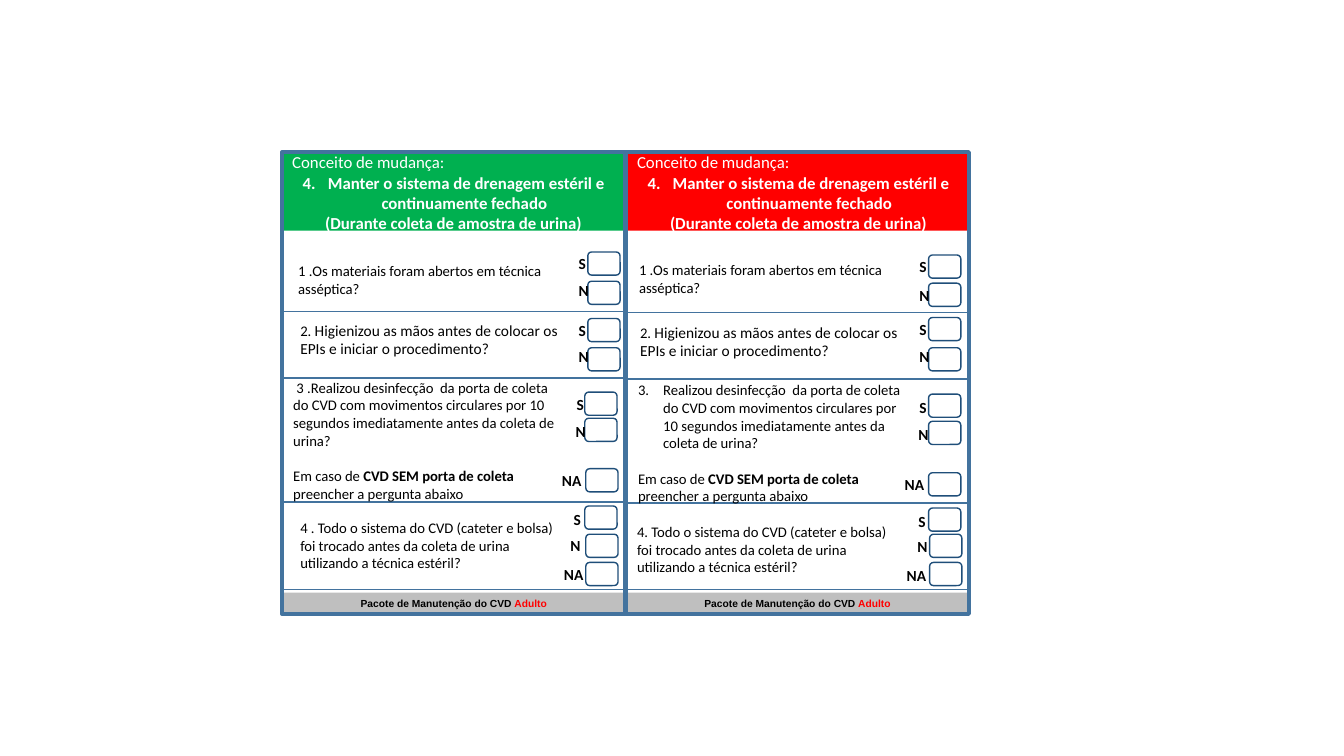
from dataclasses import dataclass

from lxml import etree
from pptx import Presentation
from pptx.dml.color import RGBColor
from pptx.enum.shapes import MSO_CONNECTOR, MSO_SHAPE
from pptx.enum.text import MSO_ANCHOR, PP_ALIGN
from pptx.oxml.ns import qn
from pptx.util import Inches, Pt

RECT = MSO_SHAPE.RECTANGLE
ROUND = MSO_SHAPE.ROUNDED_RECTANGLE
LINE = MSO_CONNECTOR.STRAIGHT
MIDDLE = MSO_ANCHOR.MIDDLE
CENTER = PP_ALIGN.CENTER


@dataclass(frozen=True)
class Theme:
    font: str = "Calibri"
    foot_font: str = "Arial"
    frame: str = "43739E"
    box: str = "1F4E79"
    grey: str = "BFBFBF"
    green: str = "00B050"
    red: str = "FF0000"
    white: str = "FFFFFF"
    black: str = "000000"
    head: float = 12
    label: float = 11
    body: float = 10.5
    foot: float = 7.3
    gap: float = 12.8


THEME = Theme()

# Wording shared by both cards
HEAD = ["Conceito de mudança:",
        "Manter o sistema de drenagem estéril e continuamente fechado ",
        "(Durante coleta de amostra de urina)"]
MATERIALS = "1 .Os materiais foram abertos em técnica asséptica?"
HANDS = ("2. ", "Higienizou as mãos antes de colocar os EPIs e iniciar o procedimento?")
PORT = ("Realizou desinfecção  da porta de coleta do CVD com movimentos circulares "
        "por 10 segundos imediatamente antes da coleta de urina?")
NO_PORT = ("Em caso de ", "CVD SEM porta de coleta ", "preencher a pergunta abaixo")
SYSTEM = ("Todo o sistema do CVD (cateter e bolsa) foi trocado antes da coleta "
          "de urina utilizando a técnica estéril?")
FOOT = ("Pacote de Manutenção do CVD ", "Adulto")

# Label sizes by answer
LABELS = {"S": (0.24, 0.17), "N": (0.24, 0.14), "NA": (0.42, 0.23)}

# Each answer: label, label left, label top, box left, box top
LEFT_MARKS = [
    ("S", 5.64, 2.53, 5.83, 2.5), ("N", 5.64, 2.81, 5.83, 2.79),
    ("S", 5.64, 3.19, 5.83, 3.16), ("N", 5.64, 3.47, 5.83, 3.45),
    ("S", 5.62, 3.93, 5.8, 3.89), ("N", 5.61, 4.21, 5.8, 4.15),
    ("NA", 5.46, 4.65, 5.81, 4.65),
    ("S", 5.59, 5.07, 5.8, 5.02), ("N", 5.56, 5.34, 5.81, 5.3),
    ("NA", 5.48, 5.58, 5.81, 5.58),
]
RIGHT_MARKS = [
    ("S", 9.02, 2.56, 9.21, 2.53), ("N", 9.02, 2.86, 9.21, 2.81),
    ("S", 9.02, 3.18, 9.21, 3.15), ("N", 9.02, 3.47, 9.21, 3.45),
    ("S", 9.02, 3.96, 9.21, 3.91), ("N", 9.01, 4.24, 9.21, 4.18),
    ("NA", 8.86, 4.69, 9.21, 4.69),
    ("S", 9.01, 5.09, 9.21, 5.04), ("N", 9, 5.35, 9.22, 5.3),
    ("NA", 8.88, 5.59, 9.22, 5.58),
]


def add_block(slide, kind, area, fill=None, line=None, width=1):
    block = slide.shapes.add_shape(kind, *map(Inches, area))
    block.shadow.inherit = False
    if fill:
        block.fill.solid()
        block.fill.fore_color.rgb = RGBColor.from_string(fill)
    else:
        block.fill.background()
    if line:
        block.line.color.rgb = RGBColor.from_string(line)
        block.line.width = Pt(width)
    else:
        block.line.fill.background()
    return block


def add_rule(slide, left, right, top):
    rule = slide.shapes.add_connector(
        LINE, Inches(left), Inches(top), Inches(right), Inches(top))
    rule.line.color.rgb = RGBColor.from_string(THEME.frame)
    rule.line.width = Pt(1)
    etree.SubElement(rule._element.spPr, qn("a:effectLst"))


def style(para, size, color=THEME.black, bold=False, font=THEME.font):
    for run in para.runs:
        run.font.name = font
        run.font.size = Pt(size)
        run.font.bold = bold
        run.font.color.rgb = RGBColor.from_string(color)


def number(para, start):
    props = para._p.get_or_add_pPr()
    props.set("marL", str(Inches(0.25)))
    props.set("indent", str(-Inches(0.25)))
    mark = etree.SubElement(props, qn("a:buFont"))
    mark.set("typeface", "+mj-lt")
    mark = etree.SubElement(props, qn("a:buAutoNum"))
    mark.set("type", "arabicPeriod")
    mark.set("startAt", str(start))


def add_runs(para, texts):
    for text in texts:
        para.add_run().text = text


def add_text(slide, area, text=""):
    frame = slide.shapes.add_textbox(*map(Inches, area)).text_frame
    frame.word_wrap = True
    frame.vertical_anchor = MIDDLE
    frame.text = text
    for para in frame.paragraphs:
        style(para, THEME.body)
    return frame


def add_head(slide, left, fill):
    frame = add_block(slide, RECT, (left, 1.53, 3.4, 0.76), fill).text_frame
    frame.word_wrap = True
    frame.vertical_anchor = MIDDLE
    frame.text = "\n".join(HEAD)
    first, title, note = frame.paragraphs
    first.alignment = PP_ALIGN.LEFT
    style(first, THEME.head, THEME.white)
    for para in (title, note):
        para.alignment = CENTER
        style(para, THEME.head, THEME.white, True)
    number(title, 4)


def add_foot(slide, left):
    frame = add_block(slide, RECT, (left, 5.88, 3.4, 0.22), THEME.grey).text_frame
    frame.word_wrap = True
    frame.vertical_anchor = MIDDLE
    para = frame.paragraphs[0]
    para.alignment = CENTER
    add_runs(para, FOOT)
    style(para, THEME.foot, bold=True, font=THEME.foot_font)
    para.runs[1].font.color.rgb = RGBColor.from_string(THEME.red)


def add_hands(slide, area):
    para = add_text(slide, area).paragraphs[0]
    add_runs(para, HANDS)
    style(para, THEME.body)
    para.runs[1].font.size = Pt(THEME.label)


def add_port(slide, area, text, start=None):
    frame = add_text(slide, area, text)
    if start:
        number(frame.paragraphs[0], start)
    para = frame.add_paragraph()
    para.space_before = Pt(THEME.gap)
    add_runs(para, NO_PORT)
    style(para, THEME.body)
    para.runs[1].font.bold = True


def add_mark(slide, label, left, top, box_left, box_top):
    add_block(slide, ROUND, (box_left, box_top, 0.32, 0.23), line=THEME.box)
    para = add_text(slide, (left, top, *LABELS[label]), label).paragraphs[0]
    para.alignment = CENTER
    style(para, THEME.label, bold=True)


def add_card(slide, left, head_left, fill, rules, marks):
    add_foot(slide, left)
    add_head(slide, head_left, fill)
    add_block(slide, RECT, (left, 1.51, 3.4, 4.58), line=THEME.frame, width=3)
    for top in rules:
        add_rule(slide, left, left + 3.39, top)
    for mark in marks:
        add_mark(slide, *mark)


def main():
    deck = Presentation()
    deck.slide_width, deck.slide_height = Inches(13.33), Inches(7.5)
    slide = deck.slides.add_slide(deck.slide_layouts[6])

    # Green card
    add_card(slide, 2.8, 2.8, THEME.green, (3.09, 3.75, 4.98, 5.85), LEFT_MARKS)
    add_text(slide, (2.86, 2.52, 2.8, 0.51), MATERIALS)
    add_hands(slide, (2.88, 3.11, 2.8, 0.51))
    add_port(slide, (2.81, 3.95, 2.83, 0.84), " 3 ." + PORT)
    add_text(slide, (2.88, 5.06, 2.8, 0.7), "4 . " + SYSTEM)

    # Red card
    add_card(slide, 6.21, 6.22, THEME.red, (3.1, 3.76, 4.99, 5.85), RIGHT_MARKS)
    add_text(slide, (6.24, 2.51, 2.8, 0.51), MATERIALS)
    add_hands(slide, (6.25, 3.13, 2.8, 0.51))
    add_port(slide, (6.23, 3.9, 2.83, 0.99), PORT, 3)
    add_text(slide, (6.22, 5.1, 2.8, 0.7), "4. " + SYSTEM)

    deck.save("out.pptx")


if __name__ == "__main__":
    main()
